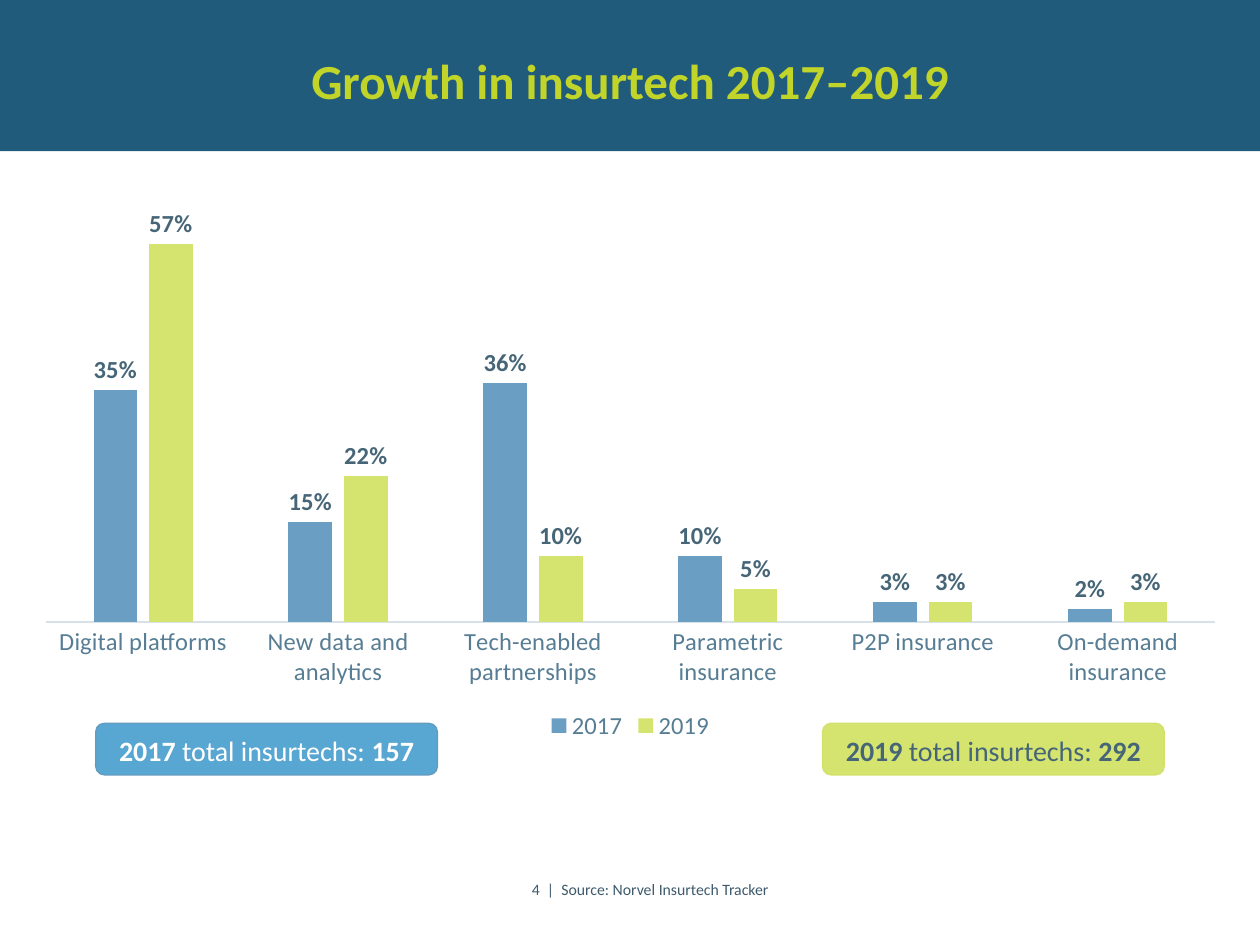
from lxml import etree
from pptx import Presentation
from pptx.chart.data import CategoryChartData
from pptx.dml.color import RGBColor
from pptx.enum.chart import XL_CHART_TYPE, XL_LABEL_POSITION, XL_LEGEND_POSITION, XL_TICK_MARK
from pptx.enum.shapes import MSO_SHAPE
from pptx.enum.text import MSO_ANCHOR, PP_ALIGN
from pptx.oxml.ns import qn
from pptx.util import Pt

COLUMNS = XL_CHART_TYPE.COLUMN_CLUSTERED
OUTSIDE = XL_LABEL_POSITION.OUTSIDE_END
BOTTOM = XL_LEGEND_POSITION.BOTTOM
NO_TICK = XL_TICK_MARK.NONE
RECT = MSO_SHAPE.RECTANGLE
ROUNDED = MSO_SHAPE.ROUNDED_RECTANGLE
MIDDLE = MSO_ANCHOR.MIDDLE
CENTER = PP_ALIGN.CENTER

NAVY = RGBColor(0x21, 0x5B, 0x7B)
LIME = RGBColor(0xC0, 0xD4, 0x29)
BLUE = RGBColor(0x6A, 0x9E, 0xC2)
GREEN = RGBColor(0xD5, 0xE3, 0x6F)
GREEN_EDGE = RGBColor(0xD2, 0xE1, 0x6A)
SKY = RGBColor(0x58, 0xA6, 0xD2)
SKY_EDGE = RGBColor(0x66, 0x9B, 0xC0)
WHITE = RGBColor(0xFF, 0xFF, 0xFF)
INK = RGBColor(0x1F, 0x2D, 0x35)
SLATE = RGBColor(0x46, 0x66, 0x78)
AXIS_TEXT = RGBColor(0x56, 0x7D, 0x93)
AXIS_LINE = RGBColor(0xD7, 0xE1, 0xE7)
FOOTER = RGBColor(0x3E, 0x5A, 0x6C)

CATEGORIES = ["Digital platforms", "New data and analytics", "Tech-enabled partnerships",
              "Parametric insurance", "P2P insurance", "On-demand insurance"]
SERIES = [("2017", [0.35, 0.15, 0.36, 0.1, 0.03, 0.02], BLUE),
          ("2019", [0.57, 0.22, 0.1, 0.05, 0.03, 0.03], GREEN)]


class SlideBuilder:
    font = "Calibri"

    def __init__(self, slide):
        self.s = slide

    def style(self, font, size, color, bold=False):
        font.name = self.font
        font.size = Pt(size)
        font.bold = bold
        font.color.rgb = color

    def frame(self, sp, inset=0):
        tf = sp.text_frame
        tf.word_wrap = True
        tf.vertical_anchor = MIDDLE
        tf.margin_left = tf.margin_right = Pt(inset)
        tf.margin_top = tf.margin_bottom = Pt(inset)
        return tf

    def set_text(self, sp, text, size, color, bold=False):
        tf = self.frame(sp)
        tf.text = text
        p = tf.paragraphs[0]
        p.alignment = CENTER
        for r in p.runs:
            self.style(r.font, size, color, bold)

    def shape(self, kind, x, y, w, h, fill, edge=None):
        sp = self.s.shapes.add_shape(kind, Pt(x), Pt(y), Pt(w), Pt(h))
        sp.shadow.inherit = False
        sp.fill.solid()
        sp.fill.fore_color.rgb = fill
        if edge is None:
            sp.line.fill.background()
        else:
            sp.line.color.rgb = edge
            sp.line.width = Pt(0.75)
        return sp

    def title(self, text, x, y, w, h, band_height):
        sp = self.s.shapes.title
        sp.left, sp.top, sp.width, sp.height = Pt(x), Pt(y), Pt(w), Pt(h)
        self.set_text(sp, text, 28, LIME, True)
        band = self.shape(RECT, 0, 0, 720, band_height, NAVY)
        sp.element.addprevious(band.element)

    def text(self, text, x, y, w, h, size, color):
        sp = self.s.shapes.add_textbox(Pt(x), Pt(y), Pt(w), Pt(h))
        self.set_text(sp, text, size, color)

    def total(self, year, count, x, fill, edge, color):
        sp = self.shape(ROUNDED, x, 413.3, 195.3, 29.5, fill, edge)
        p = self.frame(sp, 7.2).paragraphs[0]
        p.alignment = CENTER
        p.line_spacing = 1.06
        for text, bold in ((f"{year} ", True), ("total insurtechs: ", False), (count, True)):
            r = p.add_run()
            r.text = text
            self.style(r.font, 16, color, bold)

    def plot_layout(self, chart, **fractions):
        area = chart.plots[0]._element.getparent()
        layout = area.find(qn("c:layout"))
        if layout is None:
            layout = etree.Element(qn("c:layout"))
            area.insert(0, layout)
        manual = etree.SubElement(layout, qn("c:manualLayout"))
        settings = {"layoutTarget": "inner", "xMode": "edge", "yMode": "edge", **fractions}
        for tag, value in settings.items():
            etree.SubElement(manual, qn(f"c:{tag}")).set("val", str(value))

    def chart(self, x, y, w, h):
        data = CategoryChartData(number_format="0%")
        data.categories = CATEGORIES
        for name, values, _ in SERIES:
            data.add_series(name, values)
        chart = self.s.shapes.add_chart(COLUMNS, Pt(x), Pt(y), Pt(w), Pt(h), data).chart
        self.style(chart.font, 14, INK)
        chart.has_title = False
        chart.has_legend = True
        chart.legend.position = BOTTOM
        chart.legend.include_in_layout = False
        self.style(chart.legend.font, 14, AXIS_TEXT)

        value_axis = chart.value_axis
        value_axis.minimum_scale = 0
        value_axis.maximum_scale = 0.6
        value_axis.has_major_gridlines = False
        value_axis.visible = False
        axis = chart.category_axis
        axis.major_tick_mark = NO_TICK
        axis.format.line.color.rgb = AXIS_LINE
        axis.format.line.width = Pt(0.75)
        self.style(axis.tick_labels.font, 14, AXIS_TEXT)

        plot = chart.plots[0]
        plot.gap_width = 219
        plot.overlap = -27
        plot.vary_by_categories = False
        for series, (_, _, color) in zip(plot.series, SERIES):
            series.format.fill.solid()
            series.format.fill.fore_color.rgb = color
            labels = series.data_labels
            labels.show_value = True
            labels.number_format = "0%"
            labels.number_format_is_linked = False
            labels.position = OUTSIDE
            self.style(labels.font, 14, SLATE, True)
        self.plot_layout(chart, x=0.02, y=0.03, w=0.96, h=0.74)


def main():
    prs = Presentation()
    prs.slide_width, prs.slide_height = Pt(720), Pt(540)
    b = SlideBuilder(prs.slides.add_slide(prs.slide_layouts[5]))
    b.title("Growth in insurtech 2017–2019", 28, 26.6, 664, 38.2, 86.4)
    b.chart(12.2, 118.8, 696.2, 307.4)
    b.total("2019", "292", 470, GREEN, GREEN_EDGE, SLATE)
    b.total("2017", "157", 54.7, SKY, SKY_EDGE, WHITE)
    b.text("4  |  Source: Norvel Insurtech Tracker", 234, 493.2, 275, 29.5, 9, FOOTER)
    prs.save("out.pptx")


if __name__ == "__main__":
    main()
